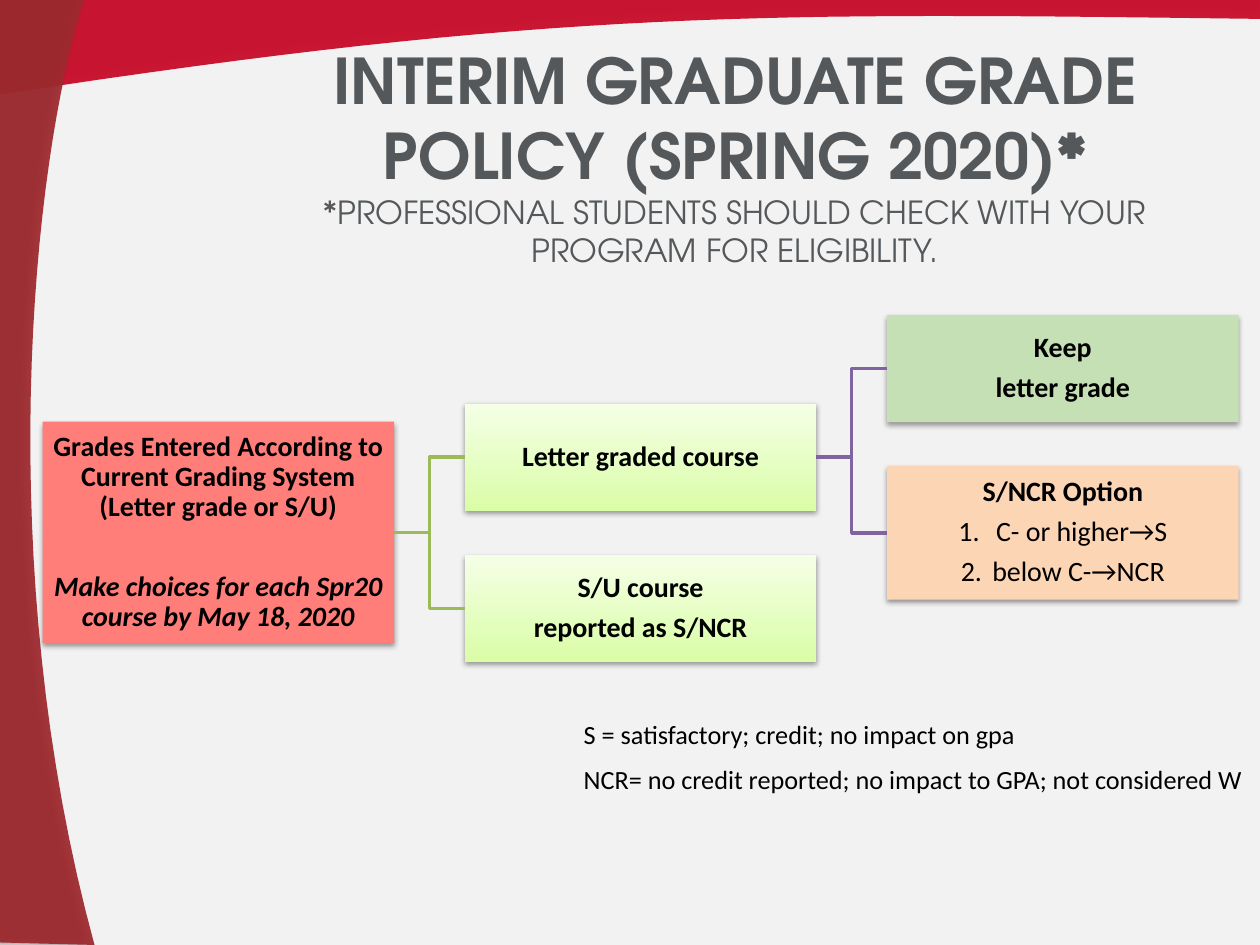
from dataclasses import dataclass

from lxml import etree
from pptx import Presentation
from pptx.dml.color import RGBColor
from pptx.enum.shapes import MSO_CONNECTOR, MSO_SHAPE
from pptx.enum.text import MSO_ANCHOR, PP_ALIGN
from pptx.oxml.ns import qn
from pptx.util import Pt

RECTANGLE = MSO_SHAPE.RECTANGLE
ELBOW = MSO_CONNECTOR.ELBOW
MIDDLE = MSO_ANCHOR.MIDDLE
CENTER = PP_ALIGN.CENTER
LEFT = PP_ALIGN.LEFT
LEFT_SITE, RIGHT_SITE = 1, 3


@dataclass(frozen=True)
class Theme:
    """Colours, fonts and type sizes of the slide."""
    background: str = "F2F2F2"
    red: str = "C8102E"
    maroon: str = "9E2A2F"
    heading: str = "54585A"
    text: str = "000000"
    start: str = "FF7E79"
    course: tuple = ("DAFDA7", "F5FFE7")
    keep: str = "C5E0B4"
    option: str = "FCD5B5"
    course_link: str = "9BBB59"
    choice_link: str = "8064A2"
    heading_font: str = "TeX Gyre Adventor"
    body_font: str = "Calibri"
    title_size: float = 36
    subtitle_size: float = 18.2
    box_size: float = 16
    note_size: float = 15


THEME = Theme()
BOX_WIDTH = 200.9
COLUMNS = [24.3 + 241.3 * level for level in range(3)]
BOX_FORMAT = {"name": THEME.body_font, "size": Pt(THEME.box_size), "bold": True}
CHOICE_FORMAT = {**BOX_FORMAT, "bold": False}


def rgb(code):
    """Turn a hex code into a colour."""
    return RGBColor.from_string(code)


def apply(target, values):
    """Set each named format value on the target."""
    for name, value in values.items():
        setattr(target, name, value)


def set_effects(shape, shadow=None):
    """Give a shape an explicit effect list, with an outer shadow if described."""
    properties = shape._element.spPr
    for old in properties.findall(qn("a:effectLst")):
        properties.remove(old)
    effects = etree.SubElement(properties, qn("a:effectLst"))
    if shadow:
        opacity, blur, distance, angle = shadow
        outer = etree.SubElement(
            effects, qn("a:outerShdw"), blurRad=str(Pt(blur)), dist=str(Pt(distance)),
            dir=str(angle * 60000), rotWithShape="0")
        tint = etree.SubElement(outer, qn("a:srgbClr"), val="000000")
        etree.SubElement(tint, qn("a:alpha"), val=str(opacity * 1000))


def curve(start, control_1, control_2, end, steps=32):
    """Return the points of a cubic curve after its start."""
    points = []
    for step in range(1, steps + 1):
        t = step / steps
        weights = ((1 - t) ** 3, 3 * t * (1 - t) ** 2, 3 * t * t * (1 - t), t ** 3)
        corners = zip(start, control_1, control_2, end)
        points.append(tuple(sum(w * c for w, c in zip(weights, axis)) for axis in corners))
    return points


def add_swoosh(slide, points, color, opacity, shadow):
    """Draw a translucent curved band."""
    (left, top), *rest = [(Pt(x), Pt(y)) for x, y in points]
    builder = slide.shapes.build_freeform(left, top)
    builder.add_line_segments(rest, close=True)
    band = builder.convert_to_shape()
    band.fill.solid()
    band.fill.fore_color.rgb = rgb(color)
    tint = band._element.spPr.find(qn("a:solidFill")).find(qn("a:srgbClr"))
    etree.SubElement(tint, qn("a:alpha"), val=str(opacity * 1000))
    band.line.fill.background()
    set_effects(band, shadow)


def write_paragraph(paragraph, text, font, color, **layout):
    """Write one formatted run into a paragraph."""
    apply(paragraph, layout)
    run = paragraph.add_run()
    run.text = text
    apply(run.font, font)
    run.font.color.rgb = rgb(color)


def number_paragraph(paragraph):
    """Give a paragraph an automatic number."""
    properties = paragraph._p.get_or_add_pPr()
    apply_indent = {"marL": Pt(18), "indent": -Pt(18)}
    for name, value in apply_indent.items():
        properties.set(name, str(value))
    etree.SubElement(properties, qn("a:buFont"), typeface="+mj-lt")
    etree.SubElement(properties, qn("a:buAutoNum"), type="arabicPeriod")


def add_box(slide, level, top, height, fill, lines):
    """Add a box of the decision tree with lines of (text, font, gap, numbered)."""
    box = slide.shapes.add_shape(
        RECTANGLE, Pt(COLUMNS[level]), Pt(top), Pt(BOX_WIDTH), Pt(height))
    if isinstance(fill, tuple):
        box.fill.gradient()
        box.fill.gradient_angle = 90
        for stop, color in zip(box.fill.gradient_stops, fill):
            stop.color.rgb = rgb(color)
    else:
        box.fill.solid()
        box.fill.fore_color.rgb = rgb(fill)
    box.line.fill.background()
    set_effects(box, (38, 3.1, 1.6, 90))
    frame = box.text_frame
    margins = dict.fromkeys(
        ("margin_left", "margin_top", "margin_right", "margin_bottom"), Pt(0.8))
    apply(frame, {**margins, "word_wrap": True, "vertical_anchor": MIDDLE})
    for index, (text, font, gap, numbered) in enumerate(lines):
        paragraph = frame.add_paragraph() if index else frame.paragraphs[0]
        write_paragraph(paragraph, text, font, THEME.text, alignment=CENTER,
                        line_spacing=0.9, space_before=Pt(gap))
        if numbered:
            number_paragraph(paragraph)
    return box


def add_link(slide, parent, child, color):
    """Join two boxes with an elbow connector."""
    link = slide.shapes.add_connector(ELBOW, 0, 0, 0, 0)
    link.begin_connect(parent, RIGHT_SITE)
    link.end_connect(child, LEFT_SITE)
    link.line.color.rgb = rgb(color)
    link.line.width = Pt(2)
    set_effects(link)


def add_text(slide, left, top, width, height, lines, color, alignment):
    """Add a text box with one paragraph per (text, font) line."""
    frame = slide.shapes.add_textbox(Pt(left), Pt(top), Pt(width), Pt(height)).text_frame
    apply(frame, {"word_wrap": True, "vertical_anchor": MIDDLE})
    for index, (text, font) in enumerate(lines):
        paragraph = frame.add_paragraph() if index else frame.paragraphs[0]
        write_paragraph(paragraph, text, font, color, alignment=alignment)


def main():
    """Build the grade policy slide."""
    deck = Presentation()
    apply(deck, {"slide_width": Pt(720), "slide_height": Pt(540)})
    slide = deck.slides.add_slide(deck.slide_layouts[6])
    slide.background.fill.solid()
    slide.background.fill.fore_color.rgb = rgb(THEME.background)

    top_curve = curve((0, 54), (317.5, 5), (438.5, 7.2), (720, 10.8))
    add_swoosh(slide, [(720, 0), (0, 0), (0, 54)] + top_curve, THEME.red, 97, (35, 4, 3.5, 270))
    side_curve = curve((48, 0), (18, 94.3), (-5, 324), (54, 540))
    add_swoosh(slide, [(0, 538.6), (0, 0), (48, 0)] + side_curve, THEME.maroon, 94, (45, 4, 4, 180))

    title_format = {"name": THEME.heading_font, "size": Pt(THEME.title_size), "bold": True}
    subtitle_format = {**title_format, "size": Pt(THEME.subtitle_size), "bold": False}
    add_text(slide, 174.2, 22.5, 491.8, 132, [
        ("INTERIM GRADUATE GRADE POLICY (SPRING 2020)*", title_format),
        ("*PROFESSIONAL STUDENTS SHOULD CHECK WITH YOUR PROGRAM FOR ELIGIBILITY.",
         subtitle_format)], THEME.heading, CENTER)

    grades = add_box(slide, 0, 241, 126.7, THEME.start, [
        ("Grades Entered According to Current Grading System (Letter grade or S/U)",
         BOX_FORMAT, 0, False),
        ("Make choices for each Spr20 course by May 18, 2020",
         {**BOX_FORMAT, "italic": True}, 28.5, False)])
    letter = add_box(slide, 1, 230.6, 61.2, THEME.course, [
        ("Letter graded course", BOX_FORMAT, 0, False)])
    pass_fail = add_box(slide, 1, 317, 61.2, THEME.course, [
        ("S/U course", BOX_FORMAT, 0, False),
        ("reported as S/NCR", BOX_FORMAT, 5.6, False)])
    keep = add_box(slide, 2, 180, 61.2, THEME.keep, [
        ("Keep", BOX_FORMAT, 0, False),
        ("letter grade", BOX_FORMAT, 5.6, False)])
    option = add_box(slide, 2, 266.2, 76.5, THEME.option, [
        ("S/NCR Option", BOX_FORMAT, 0, False),
        (" C- or higher→S", CHOICE_FORMAT, 5.6, True),
        ("below C-→NCR", CHOICE_FORMAT, 5.6, True)])

    for parent, children, color in ((grades, (letter, pass_fail), THEME.course_link),
                                    (letter, (keep, option), THEME.choice_link)):
        for child in children:
            add_link(slide, parent, child, color)

    note_format = {"name": THEME.body_font, "size": Pt(THEME.note_size)}
    for top, note in ((406.8, "S = satisfactory; credit; no impact on gpa"),
                      (432.7, "NCR= no credit reported; no impact to GPA; not considered W")):
        add_text(slide, 326.5, top, 393.5, 25.2, [(note, note_format)], THEME.text, LEFT)

    deck.save("out.pptx")


if __name__ == "__main__":
    main()
